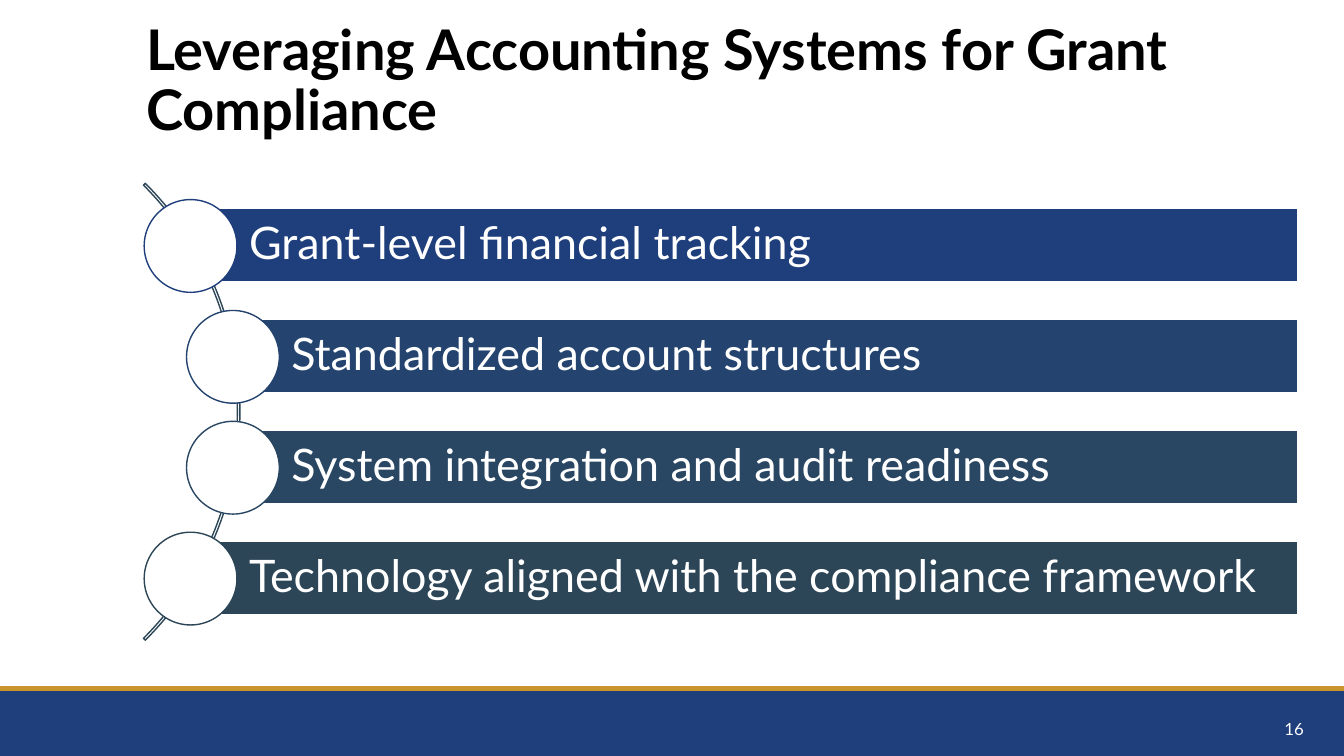
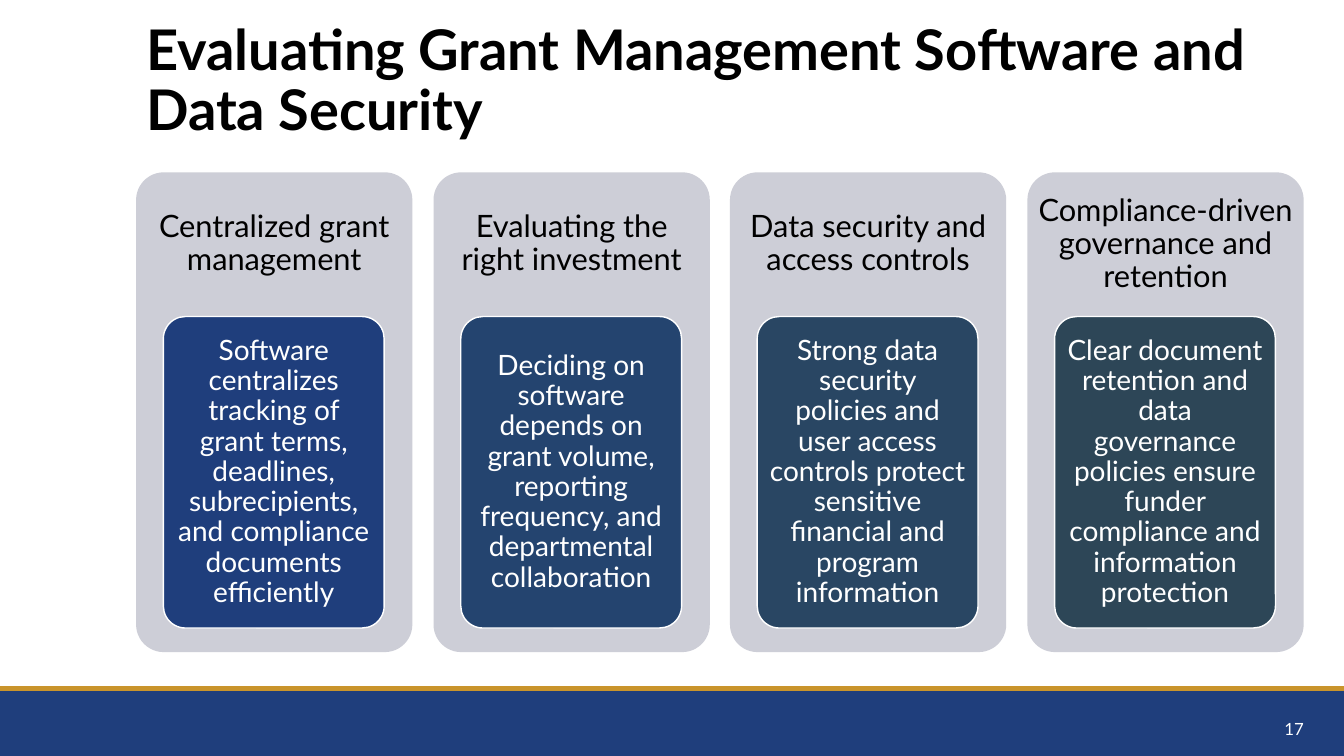
from dataclasses import dataclass

from lxml.etree import SubElement
from pptx import Presentation
from pptx.dml.color import RGBColor
from pptx.enum.shapes import MSO_CONNECTOR as Conn, MSO_SHAPE as Shp
from pptx.enum.text import MSO_ANCHOR as Anchor, MSO_AUTO_SIZE as AutoSize, PP_ALIGN as Align
from pptx.oxml.ns import qn
from pptx.util import Pt

PX = 9144  # EMU per px, 100 px to the inch
SLIDE_W, SLIDE_H = 1333, 750
BAND_TOP = 683
FONT = "Lato"

NAVY = RGBColor(0x1F, 0x3E, 0x7C)
STEEL = RGBColor(0x24, 0x44, 0x6F)
SLATE = RGBColor(0x29, 0x46, 0x63)
TEAL = RGBColor(0x2D, 0x46, 0x57)
GOLD = RGBColor(0xC9, 0x94, 0x2B)
GREY = RGBColor(0xCD, 0xCE, 0xD7)
WHITE = RGBColor(0xFF, 0xFF, 0xFF)
BLACK = RGBColor(0x00, 0x00, 0x00)

TITLE_BOX = (135, 41, 1168, 81)
NUMBER_BOX = (1003, 703, 300, 40)


@dataclass(frozen=True)
class Row:
    text: str
    color: RGBColor
    indent: int


@dataclass(frozen=True)
class Card:
    heading: str
    body: str
    color: RGBColor


ROWS = [
    Row("Grant-level financial tracking", NAVY, 0),
    Row("Standardized account structures", STEEL, 42),
    Row("System integration and audit readiness", SLATE, 42),
    Row("Technology aligned with the compliance framework", TEAL, 0),
]

CARDS = [
    Card("Centralized grant management",
         "Software centralizes tracking of grant terms, deadlines, subrecipients, "
         "and compliance documents efficiently", NAVY),
    Card("Evaluating the right investment",
         "Deciding on software depends on grant volume, reporting frequency, "
         "and departmental collaboration", STEEL),
    Card("Data security and access controls",
         "Strong data security policies and user access controls protect sensitive "
         "financial and program information", SLATE),
    Card("Compliance-driven governance and retention",
         "Clear document retention and data governance policies ensure funder "
         "compliance and information protection", TEAL),
]


def px(*lengths: int) -> list[int]:
    return [n * PX for n in lengths]


def set_all(obj, formats: dict) -> None:
    for name, value in formats.items():
        setattr(obj, name, value)


def write(shape, text: str, size: int, color: RGBColor, align=Align.LEFT, bold=False,
          insets=(10, 5, 10, 5), spacing=0.9) -> None:
    """Fill a shape with one formatted paragraph; insets run left, top, right, bottom."""
    tf = shape.text_frame
    sides = ("margin_left", "margin_top", "margin_right", "margin_bottom")
    set_all(tf, {"word_wrap": True, "auto_size": AutoSize.NONE,
                 "vertical_anchor": Anchor.MIDDLE, **dict(zip(sides, px(*insets)))})
    p = tf.paragraphs[0]
    set_all(p, {"alignment": align, "line_spacing": spacing})
    r = p.add_run()
    r.text = text
    set_all(r.font, {"name": FONT, "size": Pt(size), "bold": bold})
    r.font.color.rgb = color


def add_shape(s, kind, box: tuple, fill=None, line=None):
    """Add a flat preset shape; no fill or line colour means none is drawn."""
    sp = s.shapes.add_shape(kind, *px(*box))
    sp.shadow.inherit = False
    if fill is None:
        sp.fill.background()
    else:
        sp.fill.solid()
        sp.fill.fore_color.rgb = fill
    if line is None:
        sp.line.fill.background()
    else:
        sp.line.color.rgb = line
        sp.line.width = Pt(1)
    return sp


def add_round_rect(s, box: tuple, fill: RGBColor, line=None):
    sp = add_shape(s, Shp.ROUNDED_RECTANGLE, box, fill, line)
    sp.adjustments[0] = 0.1
    return sp


def add_master_footer(prs, s) -> None:
    """Draw the footer band and its rule, then move both to the slide master."""
    band = add_shape(s, Shp.RECTANGLE, (0, BAND_TOP, SLIDE_W, SLIDE_H - BAND_TOP), NAVY)
    rule = s.shapes.add_connector(Conn.STRAIGHT, *px(0, BAND_TOP, SLIDE_W, BAND_TOP))
    rule.line.color.rgb = GOLD
    rule.line.width = Pt(3)
    SubElement(rule.element.spPr, qn("a:effectLst"))
    for shape_id, shape in enumerate((band, rule), 101):
        shape.element.xpath(".//p:cNvPr")[0].set("id", str(shape_id))
        prs.slide_master.shapes.element.append(shape.element)


def add_slide(prs, title: str, number: int):
    s = prs.slides.add_slide(prs.slide_layouts.get_by_name("Title Only"))
    heading = s.shapes.title
    set_all(heading, dict(zip(("left", "top", "width", "height"), px(*TITLE_BOX))))
    write(heading, title, 40, BLACK, bold=True)
    write(s.shapes.add_textbox(*px(*NUMBER_BOX)), str(number), 12, WHITE,
          Align.RIGHT, spacing=1.0)
    return s


def add_curved_list(s, rows: list[Row]) -> None:
    left, right, top, pitch, bar_h, dot = 189, 1287, 207, 110, 73, 92
    arc = add_shape(s, Shp.BLOCK_ARC, (-403, 88, 641, 641), line=TEAL)
    for i, value in enumerate((189, 27, 0.004)):
        arc.adjustments[i] = value
    for i, row in enumerate(rows):
        x, y = left + row.indent, top + i * pitch
        bar = add_shape(s, Shp.RECTANGLE, (x, y, right - x, bar_h), row.color, WHITE)
        write(bar, row.text, 32, WHITE, insets=(58, 9, 9, 9))
        add_shape(s, Shp.OVAL, (x - dot // 2, y - (dot - bar_h) // 2, dot, dot),
                  WHITE, row.color)


def add_cards(s, cards: list[Card]) -> None:
    left, right, top, card_w, card_h = 135, 1293, 171, 274, 476
    head_h, panel_w, panel_h = 143, 219, 309
    pitch = (right - left - card_w) / (len(cards) - 1)
    for i, card in enumerate(cards):
        x = left + round(i * pitch)
        add_round_rect(s, (x, top, card_w, card_h), GREY)
        heading = s.shapes.add_textbox(*px(x, top, card_w, head_h))
        write(heading, card.heading, 22, BLACK, Align.CENTER, insets=(9, 9, 9, 9))
        panel = add_round_rect(s, (x + (card_w - panel_w) // 2, top + head_h, panel_w, panel_h),
                               card.color, WHITE)
        write(panel, card.body, 20, WHITE, Align.CENTER, insets=(6, 4, 6, 4))


def main() -> None:
    prs = Presentation()
    prs.slide_width, prs.slide_height = px(SLIDE_W, SLIDE_H)
    s = add_slide(prs, "Leveraging Accounting Systems for Grant Compliance", 16)
    add_master_footer(prs, s)
    add_curved_list(s, ROWS)
    s = add_slide(prs, "Evaluating Grant Management Software and Data Security", 17)
    add_cards(s, CARDS)
    prs.save("out.pptx")


if __name__ == "__main__":
    main()
